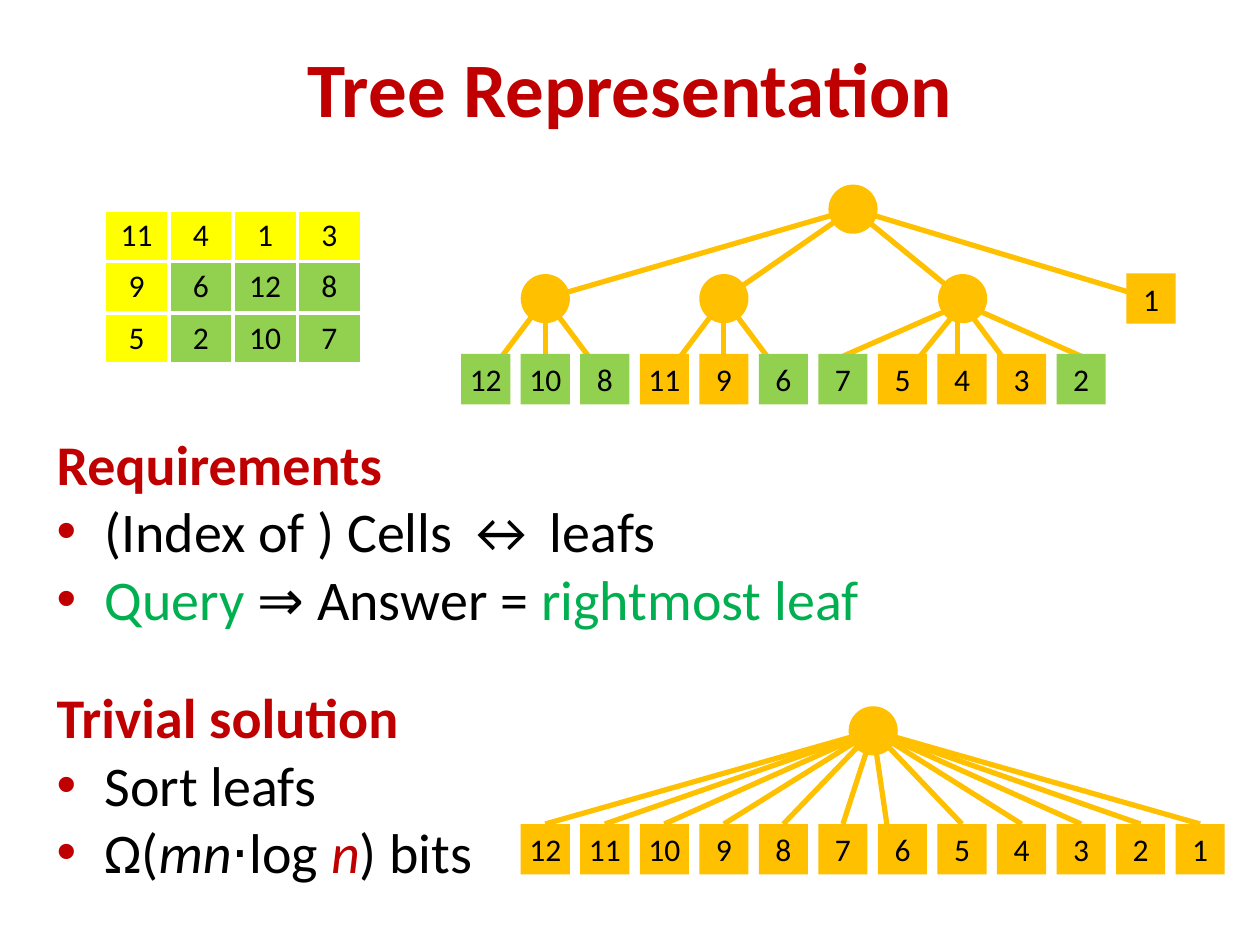
from lxml import etree
from pptx import Presentation
from pptx.dml.color import RGBColor
from pptx.enum import shapes as kinds, text as enums
from pptx.oxml import ns
from pptx.util import Inches, Pt

HUES = {"red": "C00000", "black": "000000", "gold": "FFC000", "green": "92D050",
        "yellow": "FFFF00", "leaf": "00B050", "white": "FFFFFF"}
SIDE = 0.39
STEP = 0.4725
LEFT = 3.66


def slot(i):
    """Left edge of the leaf in column i."""
    return LEFT + i * STEP


def mid(i):
    return slot(i) + SIDE / 2


class Deck:
    font = "Calibri"

    def __init__(self):
        self.prs = Presentation()
        self.prs.slide_width = Inches(10)
        self.prs.slide_height = Inches(7.5)
        self.slide = self.prs.slides.add_slide(self.prs.slide_layouts[1])
        self.items = self.slide.shapes

    def hue(self, name):
        return RGBColor.from_string(HUES[name])

    def place(self, shape, *box):
        shape.left, shape.top, shape.width, shape.height = map(Inches, box)

    def style(self, run, size, color="black", bold=False, italic=False):
        font = run.font
        font.name, font.size, font.bold, font.italic = self.font, Pt(size), bold, italic
        font.color.rgb = self.hue(color)

    def title(self, words, *box):
        shape = self.items.title
        self.place(shape, *box)
        frame = shape.text_frame
        frame.text = words
        frame.auto_size = enums.MSO_AUTO_SIZE.NONE
        self.style(frame.paragraphs[0].runs[0], 44, "red", True)

    def points(self, shape, head, rows, *box):
        """Bold heading, then bulleted rows of (words, colour, italic) runs."""
        self.place(shape, *box)
        frame = shape.text_frame
        frame.word_wrap = True
        frame.auto_size = enums.MSO_AUTO_SIZE.NONE
        frame.text = head
        first = frame.paragraphs[0]
        self.style(first.runs[0], 32, "red", True)
        self.bullet(first, False)
        for row in rows:
            para = frame.add_paragraph()
            for words, color, italic in row:
                run = para.add_run()
                run.text = words
                self.style(run, 32, color, italic=italic)
            self.bullet(para, True)

    def bullet(self, para, shown):
        para.space_before = Pt(0)
        props = para._p.get_or_add_pPr()
        depth = Inches(0.38) if shown else 0
        props.set("marL", str(depth))
        props.set("indent", str(-depth))
        if not shown:
            etree.SubElement(props, ns.qn("a:buNone"))
            return
        tint = etree.SubElement(props, ns.qn("a:buClr"))
        etree.SubElement(tint, ns.qn("a:srgbClr"), val=HUES["red"])
        etree.SubElement(props, ns.qn("a:buFont"), typeface="Arial")
        etree.SubElement(props, ns.qn("a:buChar"), char="•")

    def text(self):
        return self.items.add_textbox(0, 0, 0, 0)

    def table(self, rows, marked, *box):
        grid = self.items.add_table(len(rows), len(rows[0]), *map(Inches, box)).table
        for r, row in enumerate(rows):
            for c, value in enumerate(row):
                cell = grid.cell(r, c)
                cell.text = str(value)
                cell.fill.solid()
                cell.fill.fore_color.rgb = self.hue("green" if value in marked else "yellow")
                para = cell.text_frame.paragraphs[0]
                para.alignment = enums.PP_ALIGN.CENTER
                self.style(para.runs[0], 18)
                self.border(cell)

    def border(self, cell):
        props = cell._tc.get_or_add_tcPr()
        for i, side in enumerate("LRTB"):
            line = etree.Element(ns.qn("a:ln" + side), w=str(Pt(2.25)))
            fill = etree.SubElement(line, ns.qn("a:solidFill"))
            etree.SubElement(fill, ns.qn("a:srgbClr"), val=HUES["white"])
            props.insert(i, line)

    def shape(self, kind, x, y, color="gold"):
        item = self.items.add_shape(kind, *map(Inches, (x, y, SIDE, SIDE)))
        item.shadow.inherit = False
        item.fill.solid()
        item.fill.fore_color.rgb = self.hue(color)
        item.line.fill.background()
        return item

    def node(self, x, y):
        """Round inner node centred on x, y."""
        self.shape(kinds.MSO_SHAPE.OVAL, x - SIDE / 2, y - SIDE / 2)

    def leaf(self, value, x, y, color="gold"):
        item = self.shape(kinds.MSO_SHAPE.RECTANGLE, x, y, color)
        item.height = Inches(0.4)
        frame = item.text_frame
        frame.margin_left = frame.margin_right = 0
        frame.vertical_anchor = enums.MSO_ANCHOR.MIDDLE
        frame.text = str(value)
        para = frame.paragraphs[0]
        para.alignment = enums.PP_ALIGN.CENTER
        self.style(para.runs[0], 18)

    def fan(self, hub, feet):
        for foot in feet:
            line = self.items.add_connector(kinds.MSO_CONNECTOR.STRAIGHT,
                                            *map(Inches, (*foot, *hub)))
            line.line.color.rgb = self.hue("gold")
            line.line.width = Pt(3)
            etree.SubElement(line._element.spPr, ns.qn("a:effectLst"))


def main():
    deck = Deck()
    marked = {6, 12, 8, 2, 10, 7}
    cells = [[11, 4, 1, 3], [9, 6, 12, 8], [5, 2, 10, 7]]
    deck.title("Tree Representation", 0.5, 0.06, 9, 1.25)
    # Plain grid, then the same grid with the query cells marked
    for query in (set(), marked):
        deck.table(cells, query, 0.83, 1.67, 2.04, 1.22)

    # Tree with three inner nodes
    root = (6.77, 1.66)
    hubs = [(mid(1), 2.37), (mid(4), 2.37), (7.64, 2.37)]
    for hub, cols in zip(hubs, (range(3), range(3, 6))):
        deck.fan(hub, [(mid(i), 3) for i in cols])
    deck.fan((7.64, 2.41), [(6.57, 2.88), (7.13, 3.04), (8.11, 3.04), (8.7, 2.88)])
    deck.fan((7.6, 2.41), [(7.6, 3.04)])
    deck.fan(root, hubs + [(9.13, 2.37)])
    for spot in hubs + [root]:
        deck.node(*spot)
    for i, value in enumerate([12, 10, 8, 11, 9, 6, 7, 5, 4, 3, 2]):
        deck.leaf(value, slot(i), 2.81, "green" if value in marked else "gold")
    deck.leaf(1, 8.94, 2.17)

    deck.points(deck.slide.placeholders[1], "Requirements", [
        [("(Index of ) Cells ↔ leafs", "black", False)],
        [("Query ", "leaf", False), ("⇒ Answer = ", "black", False),
         ("rightmost leaf", "leaf", False)],
    ], 0.35, 3.36, 6.69, 2.08)

    # Flat tree with sorted leaves
    hub = (6.93, 5.8)
    feet = [(mid(i), 6.54) for i in range(1, 13)]
    feet[6] = (7.05, 6.62)
    deck.fan(hub, feet)
    for i in range(1, 13):
        deck.leaf(13 - i, slot(i), 6.54)
    deck.node(*hub)

    deck.points(deck.text(), "Trivial solution", [
        [("Sort leafs", "black", False)],
        [("Ω(", "black", False), ("mn", "black", True), ("⋅log ", "black", False),
         ("n", "red", True), (") bits", "black", False)],
    ], 0.35, 5.37, 6.69, 2.08)
    deck.prs.save("out.pptx")


if __name__ == "__main__":
    main()
